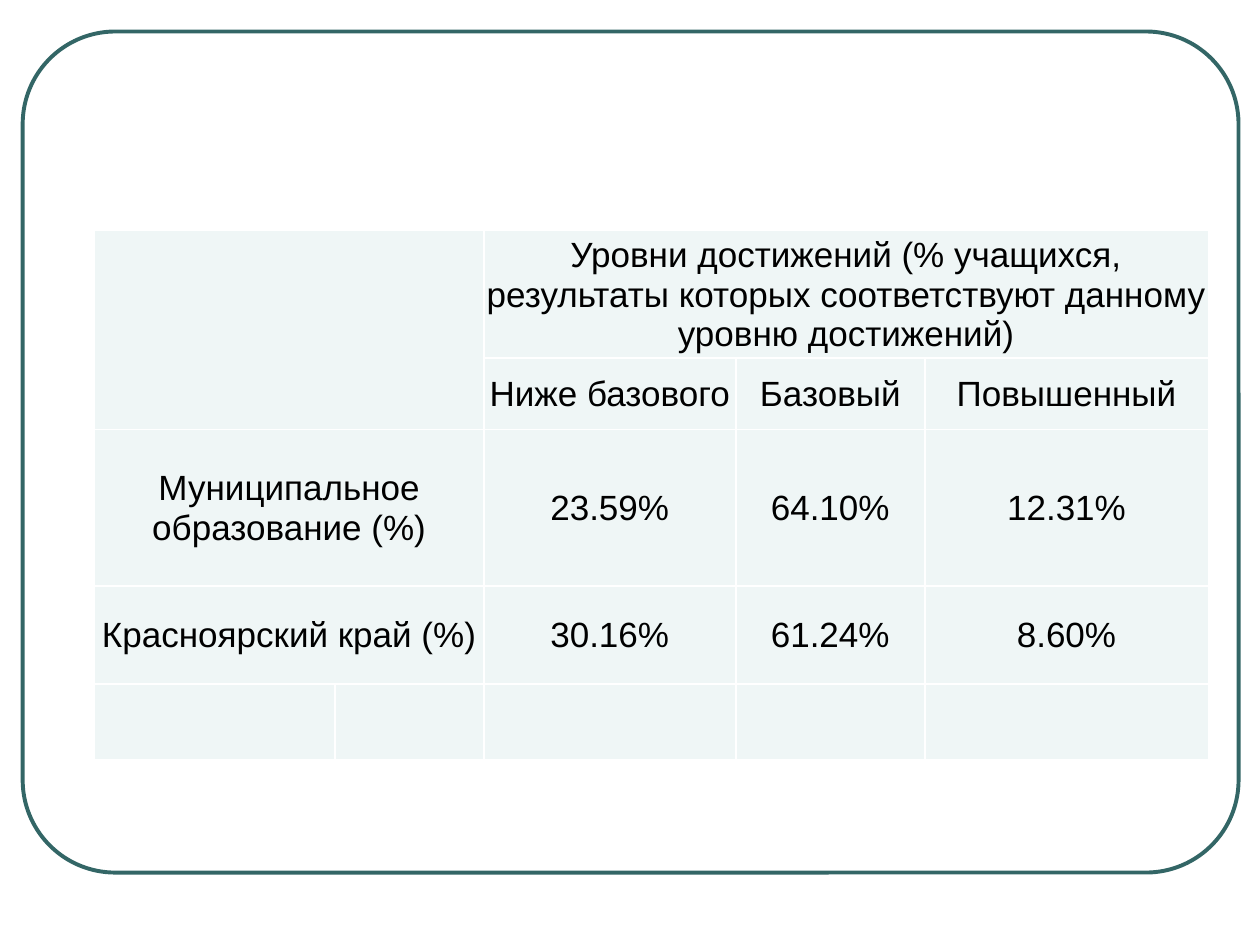
import pptx
import pptx.util
import pptx.dml.color
import pptx.enum.shapes
import pptx.enum.text
import pptx.oxml.ns
from lxml import etree

Inch = pptx.util.Inches
Pt = pptx.util.Pt

COLORS = {"frame": "336666", "cell": "EFF6F6", "edge": "FFFFFF", "text": "000000"}
WIDE, HIGH = 10, 7.5
COLS = [1.91, 1.18, 2, 1.5, 2.25]
ROWS = [1.01, 0.57, 1.24, 0.78, 0.6]
# First and last cell of each merged block, as (row, column)
SPANS = [((0, 0), (1, 1)), ((0, 2), (0, 4)), ((2, 0), (2, 1)), ((3, 0), (3, 1))]
TEXTS = [
    ["", "", "Уровни достижений (% учащихся, результаты которых "
             "соответствуют данному уровню достижений)", "", ""],
    ["", "", "Ниже базового", "Базовый", "Повышенный"],
    ["Муниципальное образование (%)", "", "23.59%", "64.10%", "12.31%"],
    ["Красноярский край (%)", "", "30.16%", "61.24%", "8.60%"],
    [""] * 5,
]


def color(name):
    return pptx.dml.color.RGBColor.from_string(COLORS[name])


def add_frame(slide):
    frame = slide.shapes.add_shape(
        pptx.enum.shapes.MSO_SHAPE.ROUNDED_RECTANGLE,
        Inch(WIDE * 0.018), Inch(HIGH / 30), Inch(WIDE * 0.965), Inch(HIGH * 0.89))
    frame.adjustments[0] = 0.11
    frame.shadow.inherit = False
    frame.fill.background()
    frame.line.color.rgb = color("frame")
    frame.line.width = Pt(2.25)


def add_edges(cell):
    props = cell._tc.get_or_add_tcPr()
    qn = pptx.oxml.ns.qn
    for side in ("a:lnL", "a:lnR", "a:lnT", "a:lnB"):
        line = etree.SubElement(props, qn(side), w=str(Pt(1)))
        fill = etree.SubElement(line, qn("a:solidFill"))
        etree.SubElement(fill, qn("a:srgbClr"), val=COLORS["edge"])


def style_cell(cell, text):
    add_edges(cell)
    cell.fill.solid()
    cell.fill.fore_color.rgb = color("cell")
    if not text:
        return
    cell.text = text
    cell.vertical_anchor = pptx.enum.text.MSO_ANCHOR.MIDDLE
    cell.margin_left = cell.margin_right = cell.margin_top = Inch(0.01)
    cell.margin_bottom = 0
    para = cell.text_frame.paragraphs[0]
    para.alignment = pptx.enum.text.PP_ALIGN.CENTER
    para.font.name = "Arial"
    para.font.size = Pt(20)
    para.font.color.rgb = color("text")


def add_grid(slide):
    table = slide.shapes.add_table(
        len(ROWS), len(COLS), Inch(0.75), Inch(1.83),
        Inch(sum(COLS)), Inch(sum(ROWS))).table
    table.first_row = table.horz_banding = False
    for col, width in zip(table.columns, COLS):
        col.width = Inch(width)
    for row, height in zip(table.rows, ROWS):
        row.height = Inch(height)
    for first, last in SPANS:
        table.cell(*first).merge(table.cell(*last))
    for row, texts in zip(table.rows, TEXTS):
        for cell, text in zip(row.cells, texts):
            style_cell(cell, text)


def main():
    deck = pptx.Presentation()
    deck.slide_width, deck.slide_height = Inch(WIDE), Inch(HIGH)
    # Blank layout, since the slide has no title
    slide = deck.slides.add_slide(deck.slide_layouts[6])
    add_frame(slide)
    add_grid(slide)
    deck.save("out.pptx")


if __name__ == "__main__":
    main()
